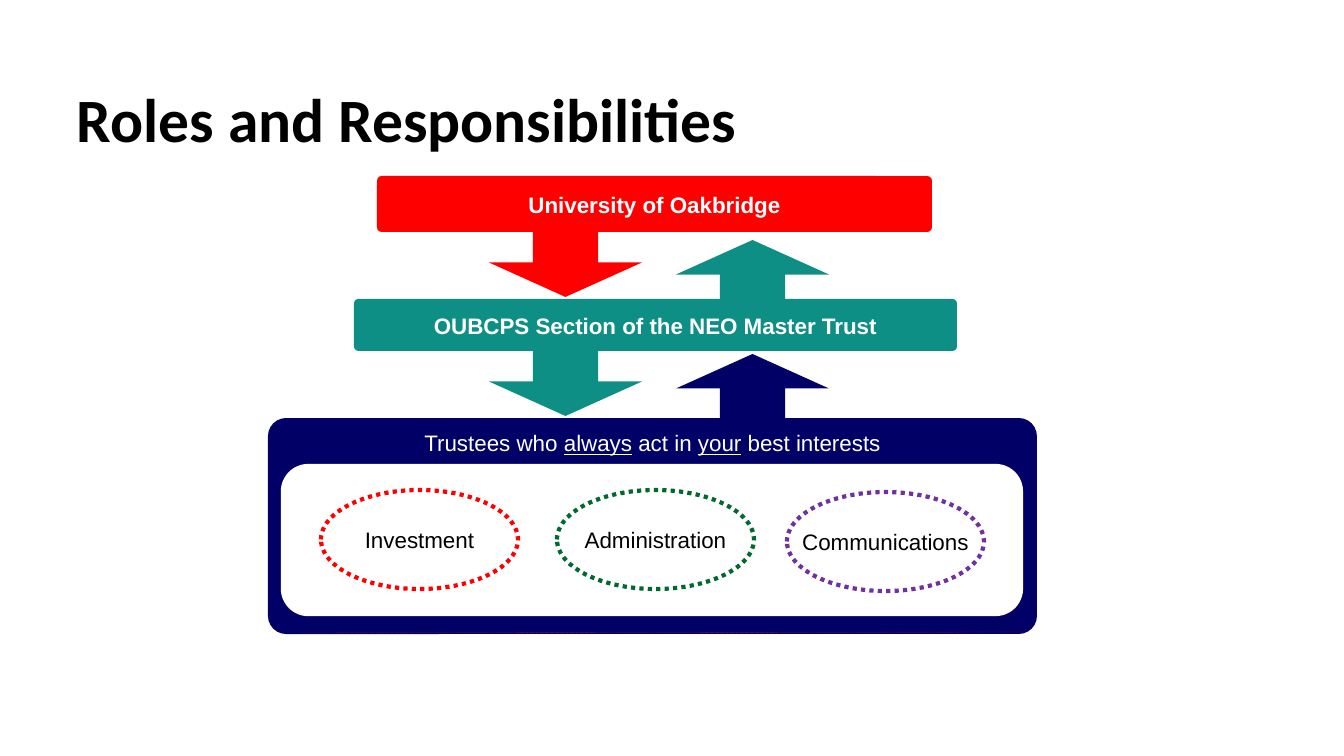
from dataclasses import dataclass
from typing import Any, Optional

from lxml.etree import SubElement
from pptx import Presentation
from pptx.dml.color import RGBColor
from pptx.enum.dml import MSO_LINE_DASH_STYLE as Dash
from pptx.enum.shapes import MSO_CONNECTOR as Conn, MSO_SHAPE as Kind
from pptx.enum.text import MSO_ANCHOR as Anchor, PP_ALIGN as Align
from pptx.oxml.ns import qn
from pptx.util import Pt

WIDE, HIGH = 1344, 756
SCALE = 12192000 / WIDE

RED = RGBColor(0xFF, 0x00, 0x00)
TEAL = RGBColor(0x0E, 0x8F, 0x85)
NAVY = RGBColor(0x00, 0x00, 0x66)
GREEN = RGBColor(0x00, 0x69, 0x2D)
PURPLE = RGBColor(0x70, 0x30, 0xA0)
MAROON = RGBColor(0x91, 0x14, 0x0F)
WHITE = RGBColor(0xFF, 0xFF, 0xFF)
BLACK = RGBColor(0x00, 0x00, 0x00)

BODY = {"name": "Arial", "size": Pt(16)}
LIGHT = {**BODY, "color": WHITE}
STRONG = {**LIGHT, "bold": True}
DARK = {**BODY, "color": BLACK}
TITLE = {"name": "Calibri", "size": Pt(44), "bold": True, "color": BLACK}


@dataclass(frozen=True)
class Item:
    """One shape, with its box in px and its look."""
    kind: Kind
    box: tuple[int, int, int, int]
    fill: Optional[RGBColor] = None
    adj: tuple[float, ...] = ()
    edge: Optional[RGBColor] = None
    width: float = 3
    dash: Optional[Dash] = None
    turn: int = 0
    runs: tuple[str, ...] = ()
    font: Optional[dict[str, Any]] = None
    anchor: Anchor = Anchor.MIDDLE


def px(num: int) -> int:
    """Turn px into EMU."""
    return round(num * SCALE)


def bar(box: tuple[int, int, int, int], fill: RGBColor, *runs: str, **look: Any) -> Item:
    """Describe a rounded bar with a label."""
    look = {"font": STRONG, **look}
    return Item(Kind.ROUNDED_RECTANGLE, box, fill, (0.084,), runs=runs, **look)


def arrow(left: int, top: int, fill: RGBColor, turn: int = 0) -> Item:
    """Describe a block arrow, pointing down unless turned."""
    return Item(Kind.DOWN_ARROW, (left, top, 153, 65), fill, (0.427, 0.53), turn=turn)


def oval(left: int, top: int, edge: RGBColor, label: str) -> Item:
    """Describe a dotted oval for one duty."""
    return Item(Kind.OVAL, (left, top, 197, 99), edge=edge, dash=Dash.ROUND_DOT,
                runs=(label,), font=DARK)


DOWN, UP = 489, 676
ITEMS = (
    arrow(DOWN, 232, RED),
    bar((268, 418, 769, 216), NAVY, "Trustees who ", "always", " act in ", "your",
        " best interests", font=LIGHT, anchor=Anchor.TOP),
    bar((377, 176, 555, 56), RED, "University of Oakbridge"),
    Item(Kind.ROUNDED_RECTANGLE, (284, 467, 736, 146), WHITE, (0.167,), WHITE, 4.5),
    oval(557, 490, GREEN, "Administration"),
    oval(787, 492, PURPLE, "Communications"),
    bar((354, 299, 603, 52), TEAL, "OUBCPS Section of the NEO Master Trust"),
    oval(321, 490, RED, "Investment"),
)
OVER = (
    arrow(DOWN, 351, TEAL),
    arrow(UP, 354, NAVY, 180),
    arrow(UP, 240, TEAL, 180),
)


def style(font: Any, look: dict[str, Any]) -> None:
    """Set font values from a dict."""
    for key, value in look.items():
        if key == "color":
            font.color.rgb = value
        else:
            setattr(font, key, value)


def write(frame: Any, item: Item) -> None:
    """Write centred runs, with every second one underlined."""
    for key, value in {"word_wrap": False, "vertical_anchor": item.anchor,
                       "margin_top": px(6), "margin_bottom": px(5)}.items():
        setattr(frame, key, value)
    para = frame.paragraphs[0]
    para.alignment = Align.CENTER
    for rank, text in enumerate(item.runs):
        run = para.add_run()
        run.text = text
        style(run.font, {**item.font, "underline": rank % 2 == 1})


def draw(shapes: Any, item: Item) -> None:
    """Draw one item."""
    shape = shapes.add_shape(item.kind, *map(px, item.box))
    shape.shadow.inherit = False
    shape.rotation = item.turn
    for rank, value in enumerate(item.adj):
        shape.adjustments[rank] = value
    if item.fill is None:
        shape.fill.background()
    else:
        shape.fill.solid()
        shape.fill.fore_color.rgb = item.fill
    if item.edge is None:
        shape.line.fill.background()
    else:
        stroke(shape.line, item.edge, item.width, item.dash)
    if item.runs:
        write(shape.text_frame, item)


def stroke(line: Any, color: RGBColor, width: float, dash: Optional[Dash]) -> None:
    """Set colour, width and dash of a line."""
    line.color.rgb = color
    for key, value in {"width": Pt(width), "dash_style": dash}.items():
        setattr(line, key, value)


def head(shapes: Any) -> None:
    """Write the slide title."""
    frame = shapes.add_textbox(*map(px, (67, 84, 1210, 52))).text_frame
    frame.word_wrap = True
    para = frame.paragraphs[0]
    para.line_spacing = 0.9
    run = para.add_run()
    run.text = "Roles and Responsibilities"
    style(run.font, TITLE)


def rule(shapes: Any) -> None:
    """Draw the fine dotted rule along the foot of the trustee box."""
    line = shapes.add_connector(Conn.STRAIGHT, *map(px, (301, 633, 1022, 632)))
    stroke(line.line, MAROON, 0.25, Dash.ROUND_DOT)
    SubElement(line._element.spPr, qn("a:effectLst"))


def main() -> None:
    """Build and save the slide."""
    deck = Presentation()
    deck.slide_width, deck.slide_height = px(WIDE), px(HIGH)
    shapes = deck.slides.add_slide(deck.slide_layouts[6]).shapes
    head(shapes)
    for item in ITEMS:
        draw(shapes, item)
    rule(shapes)
    for item in OVER:
        draw(shapes, item)
    deck.save("out.pptx")


if __name__ == "__main__":
    main()
